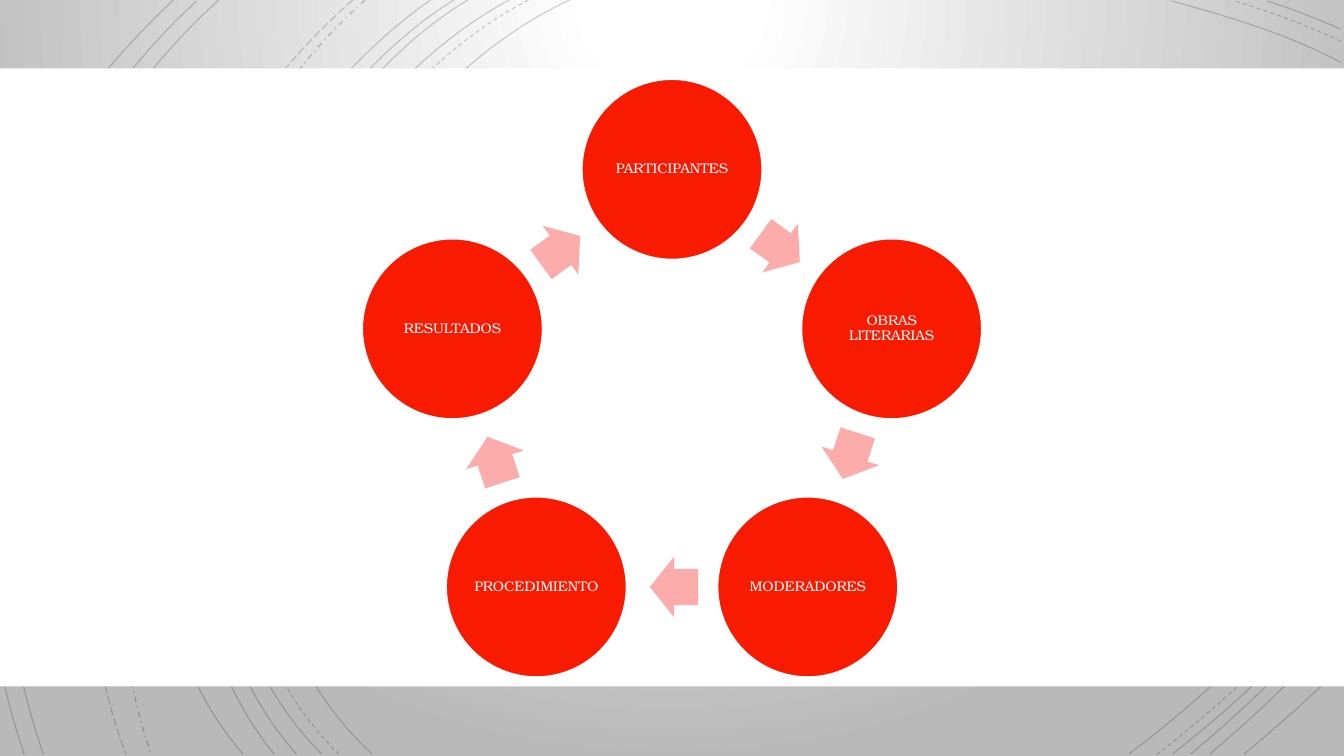
from math import cos, radians, sin

from lxml.etree import SubElement
from pptx import Presentation
from pptx.dml.color import RGBColor
from pptx.enum.dml import MSO_LINE as Dash
from pptx.enum.shapes import MSO_SHAPE as Kind
from pptx.enum.text import MSO_ANCHOR as Anchor, PP_ALIGN as Align
from pptx.oxml.ns import qn
from pptx.util import Pt

PX = 9144  # 100 px to the inch
WIDE, HIGH = 1333, 750
RED = RGBColor(0xF8, 0x1B, 0x02)
PINK = RGBColor(0xFB, 0xAC, 0xAB)
WHITE = RGBColor(0xFF, 0xFF, 0xFF)
GREY = RGBColor(0xB9, 0xB9, 0xB9)
BLACK = RGBColor(0, 0, 0)


def emu(*sizes):
    return [round(size * PX) for size in sizes]


def add(shapes, kind, x, y, w, h, color):
    """Add a filled preset shape centred on x, y."""
    shape = shapes.add_shape(kind, *emu(x - w / 2, y - h / 2, w, h))
    shape.shadow.inherit = False
    shape.fill.solid()
    shape.fill.fore_color.rgb = color
    shape.line.fill.background()
    return shape


deck = Presentation()
deck.slide_width, deck.slide_height = emu(WIDE, HIGH)
slide = deck.slides.add_slide(deck.slide_layouts[6])

# Background: a round gradient, white near the top
back = slide.background.fill
back.gradient()
for stop, color, place in zip(back.gradient_stops, (WHITE, GREY), (0.1, 1)):
    stop.color.rgb = color
    stop.position = place
grad = next(slide.element.iter(qn("a:gradFill")))
grad.remove(grad.find(qn("a:lin")))
glow = SubElement(grad, qn("a:path"), path="circle")
SubElement(glow, qn("a:fillToRect"), l="50000", t="15000", r="50000", b="169000")

# Thin arcs: four Bezier points each, by line style
ARCS = {
    (Dash.SOLID, 0.75): [
        (565, 0, 315, 115, 143, 540, 369, 748),
        (1330, 62, 1278, 34, 1217, 16, 1162, 1),
        (1120, 748, 1196, 690, 1268, 622, 1330, 548),
        (505, 0, 269, 127, 109, 537, 319, 748),
        (1330, 29, 1307, 19, 1282, 9, 1257, 1),
        (1163, 748, 1223, 701, 1279, 648, 1330, 591),
        (464, 0, 243, 133, 109, 541, 294, 748),
        (1181, 748, 1234, 704, 1284, 655, 1330, 603),
        (450, 0, 230, 138, 97, 533, 272, 748),
        (1200, 748, 1246, 709, 1290, 667, 1330, 623),
        (427, 0, 217, 147, 53, 529, 241, 748),
        (1234, 748, 1267, 721, 1299, 692, 1330, 662),
        (217, 0, 11, 185, -46, 490, 43, 748),
        (195, 1, 92, 96, 28, 214, 1, 351),
        (0, 658, 6, 689, 14, 719, 24, 748),
        (172, 0, 99, 69, 37, 150, 1, 244),
    ],
    (Dash.DASH, 0.75): [
        (524, 0, 284, 125, 122, 537, 336, 748),
        (1330, 41, 1296, 25, 1260, 12, 1225, 1),
        (1147, 749, 1212, 698, 1275, 640, 1330, 577),
    ],
    (Dash.DASH_DOT, 1): [(362, 0, 176, 166, 65, 509, 150, 748)],
    (Dash.LONG_DASH, 0.75): [(350, 0, 157, 169, 28, 499, 125, 748)],
}
arcs = slide.shapes.add_group_shape().shapes
for (dash, width), curves in ARCS.items():
    for curve in curves:
        start, *rest = zip(curve[::2], curve[1::2])
        pen = arcs.build_freeform(*start, scale=PX)
        pen.add_line_segments(rest, close=False)
        arc = pen.convert_to_shape()
        # Turn the three straight legs into one Bezier curve
        route = next(arc.element.iter(qn("a:path")))
        legs = route.findall(qn("a:lnTo"))
        bend = SubElement(route, qn("a:cubicBezTo"))
        for leg in legs:
            bend.append(leg[0])
            route.remove(leg)
        arc.shadow.inherit = False
        arc.fill.background()
        arc.line.color.rgb = BLACK
        arc.line.width = Pt(width)
        arc.line.dash_style = dash
        for tint in arc.element.iter(qn("a:srgbClr")):
            SubElement(tint, qn("a:alpha"), val="20000")

# White band
add(slide.shapes, Kind.RECTANGLE, WIDE / 2, 374.5, WIDE, 613, WHITE)

# Cycle: five circles on a ring, an arrow after each
LABELS = ["PARTICIPANTES", "OBRAS LITERARIAS", "MODERADORES",
          "PROCEDIMIENTO", "RESULTADOS"]
MID_X, MID_Y, RING, DISC = WIDE / 2, 397, 229, 179
TURN = 360 / len(LABELS)
SHIFT = 2  # arrows sit slightly before the midpoint
cycle = slide.shapes.add_group_shape().shapes
for i, label in enumerate(LABELS):
    angle = radians(i * TURN)
    disc = add(cycle, Kind.OVAL, MID_X + RING * sin(angle),
               MID_Y - RING * cos(angle), DISC, DISC, RED)
    disc.line.color.rgb = WHITE
    disc.line.width = Pt(1.25)
    frame = disc.text_frame
    frame.word_wrap = True
    frame.vertical_anchor = Anchor.MIDDLE
    frame.margin_left = frame.margin_right = PX
    frame.margin_top = frame.margin_bottom = PX
    frame.text = label
    para = frame.paragraphs[0]
    para.alignment = Align.CENTER
    para.line_spacing = 0.9
    para.font.name = "TeX Gyre Bonum"
    para.font.size = Pt(10)
    para.font.color.rgb = WHITE

    spin = (i + 0.5) * TURN
    half = radians(spin)
    reach = RING * cos(radians(TURN / 2))
    arrow = add(cycle, Kind.RIGHT_ARROW,
                MID_X + reach * sin(half) - SHIFT * cos(half),
                MID_Y - reach * cos(half) - SHIFT * sin(half), 48, 60, PINK)
    arrow.rotation = spin
    arrow.adjustments[0] = 0.6
    arrow.adjustments[1] = 0.5

deck.save("out.pptx")
